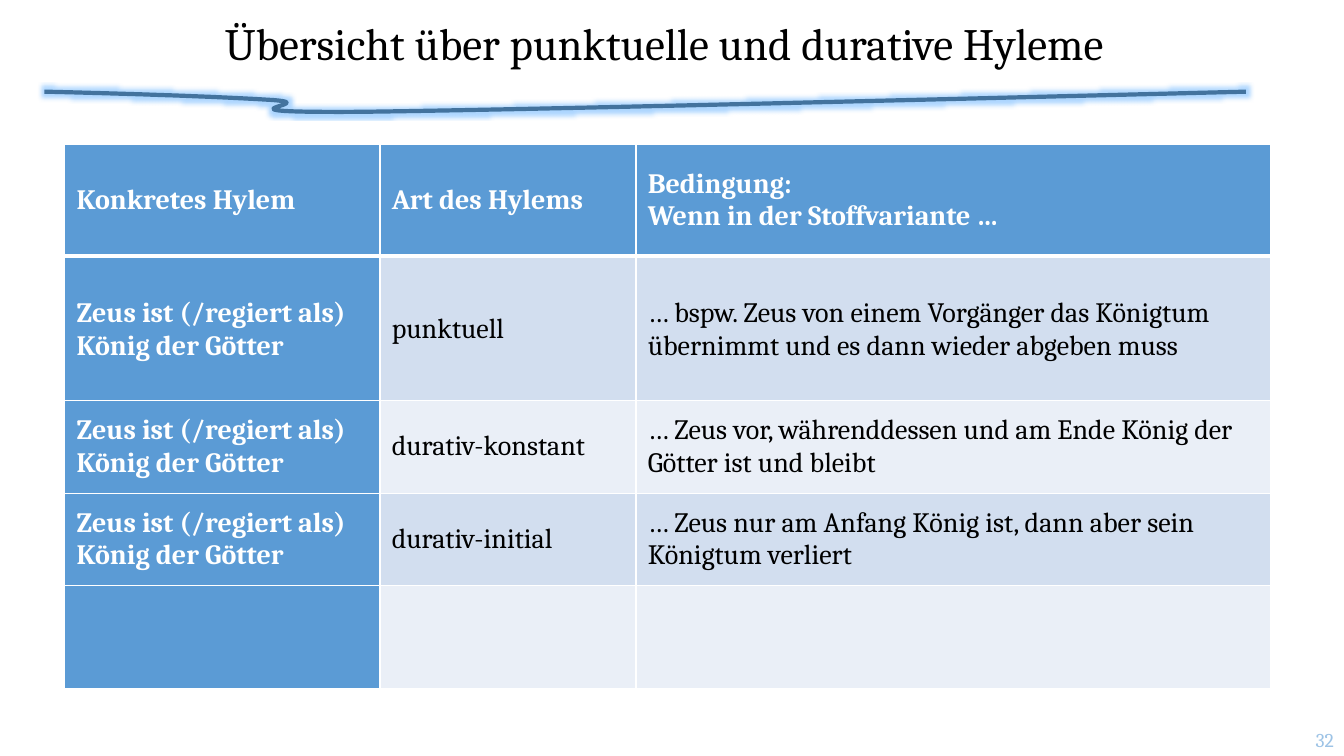
from dataclasses import dataclass

from lxml import etree
from pptx import Presentation
from pptx.dml.color import RGBColor
from pptx.enum.text import MSO_ANCHOR, PP_ALIGN
from pptx.oxml import parse_xml
from pptx.oxml.ns import nsdecls, qn
from pptx.util import Pt

MIDDLE = MSO_ANCHOR.MIDDLE
LEFT, CENTER, RIGHT = PP_ALIGN.LEFT, PP_ALIGN.CENTER, PP_ALIGN.RIGHT
TITLE_ONLY = 5


@dataclass(frozen=True)
class Theme:
    font: str = "Cambria"
    title_size: int = 32
    table_size: int = 20
    number_size: int = 14
    black: str = "000000"
    white: str = "FFFFFF"
    accent: str = "5B9BD5"
    bands: tuple = ("D2DEEF", "EAEFF7")
    stroke: str = "43739E"
    glow: str = "3399FF"
    number: str = "9DC3E6"


class SlideBuilder:
    def __init__(self, presentation, theme):
        self.theme = theme
        layout = presentation.slide_layouts[TITLE_ONLY]
        self.slide = presentation.slides.add_slide(layout)

    def set_text(self, text_frame, text, size, color, alignment=LEFT, bold=False):
        text_frame.text = text
        text_frame.word_wrap = True
        for paragraph in text_frame.paragraphs:
            paragraph.alignment = alignment
            font = paragraph.font
            font.name = self.theme.font
            font.size = Pt(size)
            font.bold = bold
            font.color.rgb = RGBColor.from_string(color)

    def title(self, text, left, top, width, height):
        title = self.slide.shapes.title
        title.left, title.top = Pt(left), Pt(top)
        title.width, title.height = Pt(width), Pt(height)
        self.set_text(title.text_frame, text, self.theme.title_size, self.theme.black, CENTER)
        title.text_frame.vertical_anchor = MIDDLE
        title.text_frame.paragraphs[0].line_spacing = 0.9

    def brush_stroke(self, start, curves, width, steps=24):
        points = []
        origin = start
        for first, second, end in curves:
            for step in range(1, steps + 1):
                t = step / steps
                weights = ((1 - t) ** 3, 3 * t * (1 - t) ** 2, 3 * t**2 * (1 - t), t**3)
                corners = (origin, first, second, end)
                points.append(tuple(
                    Pt(sum(weight * corner[axis] for weight, corner in zip(weights, corners)))
                    for axis in (0, 1)))
            origin = end
        builder = self.slide.shapes.build_freeform(Pt(start[0]), Pt(start[1]))
        builder.add_line_segments(points, close=False)
        stroke = builder.convert_to_shape()
        stroke.shadow.inherit = False
        stroke.fill.background()
        stroke.line.width = Pt(width)
        stroke.line.color.rgb = RGBColor.from_string(self.theme.stroke)
        effects = stroke._element.spPr.find(qn("a:effectLst"))
        glow = etree.SubElement(effects, qn("a:glow"), rad=str(Pt(5)))
        color = etree.SubElement(glow, qn("a:srgbClr"), val=self.theme.glow)
        etree.SubElement(color, qn("a:alpha"), val="40000")

    def borders(self, cell, widths):
        for side, width in widths.items():
            cell._tc.get_or_add_tcPr().append(parse_xml(
                f'<a:ln{side} {nsdecls("a")} w="{Pt(width)}"><a:solidFill>'
                f'<a:srgbClr val="{self.theme.white}"/></a:solidFill></a:ln{side}>'))

    def table(self, rows, left, top, widths, heights):
        theme = self.theme
        table = self.slide.shapes.add_table(
            len(heights), len(widths), Pt(left), Pt(top),
            Pt(sum(widths)), Pt(sum(heights))).table
        table.horz_banding = False
        for column, width in zip(table.columns, widths):
            column.width = Pt(width)
        for row, height in zip(table.rows, heights):
            row.height = Pt(height)
        for r, texts in enumerate(rows):
            for c, text in enumerate(texts):
                cell = table.cell(r, c)
                heading = r == 0 or c == 0
                cell.vertical_anchor = MIDDLE
                cell.margin_left = Pt(8.5)
                cell.margin_right = Pt(0 if c == len(widths) - 1 else 5)
                cell.margin_top = Pt(3.6 if r < 2 else 1.5)
                cell.margin_bottom = Pt(3.6 if r == 0 else 1.5)
                self.borders(cell, {"L": 1, "R": 1, "T": 3 if r == 1 else 1,
                                    "B": 3 if r == 0 else 1})
                fill = theme.accent if heading else theme.bands[(r - 1) % 2]
                cell.fill.solid()
                cell.fill.fore_color.rgb = RGBColor.from_string(fill)
                self.set_text(cell.text_frame, text, theme.table_size,
                              theme.white if heading else theme.black, bold=heading)

    def slide_number(self, text, left, top, width, height):
        box = self.slide.shapes.add_textbox(Pt(left), Pt(top), Pt(width), Pt(height))
        self.set_text(box.text_frame, text, self.theme.number_size, self.theme.number, RIGHT)
        box.text_frame.vertical_anchor = MIDDLE


def main():
    presentation = Presentation()
    presentation.slide_width, presentation.slide_height = Pt(960), Pt(540)
    builder = SlideBuilder(presentation, Theme())
    builder.brush_stroke(
        (31.7, 65.5),
        [((94.3, 67), (157.7, 69.1), (195.1, 71.5)),
         ((232.6, 74.2), (140.4, 80.6), (256.3, 79.9)),
         ((372.2, 78.5), (630.7, 72), (889.9, 65.5))],
        width=3)
    builder.title("Übersicht über punktuelle und durative Hyleme", 33, 0, 883.5, 65.5)
    hyleme = "Zeus ist (/regiert als) König der Götter"
    builder.table(
        [("Konkretes Hylem", "Art des Hylems", "Bedingung:\nWenn in der Stoffvariante …"),
         (hyleme, "punktuell",
          "… bspw. Zeus von einem Vorgänger das Königtum übernimmt und es dann wieder abgeben muss"),
         (hyleme, "durativ-konstant",
          "… Zeus vor, währenddessen und am Ende König der Götter ist und bleibt"),
         (hyleme, "durativ-initial",
          "… Zeus nur am Anfang König ist, dann aber sein Königtum verliert"),
         ("", "", "")],
        46.2, 103.2, widths=(225.2, 182.9, 453.6), heights=(79.9, 103, 66.2, 66.2, 73.2))
    builder.slide_number("32", 908, 517.7, 52, 20.9)
    presentation.save("out.pptx")


if __name__ == "__main__":
    main()
